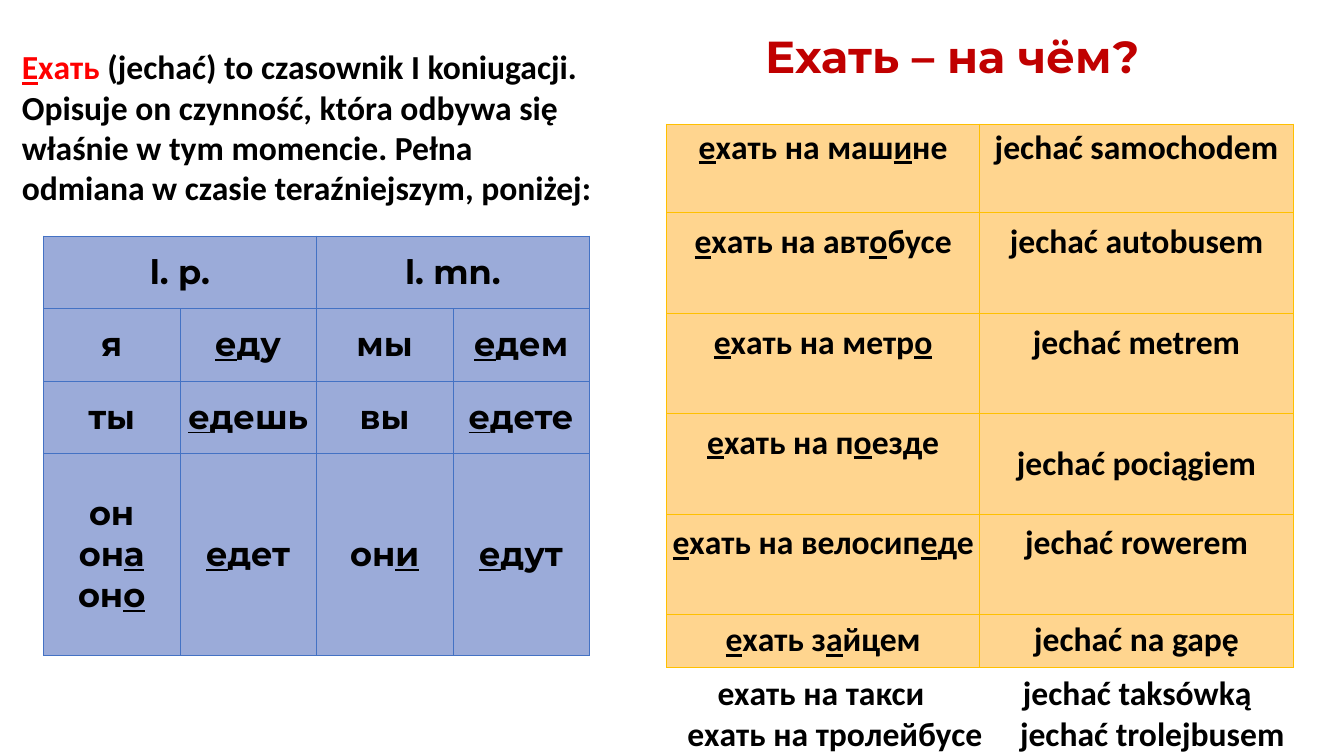
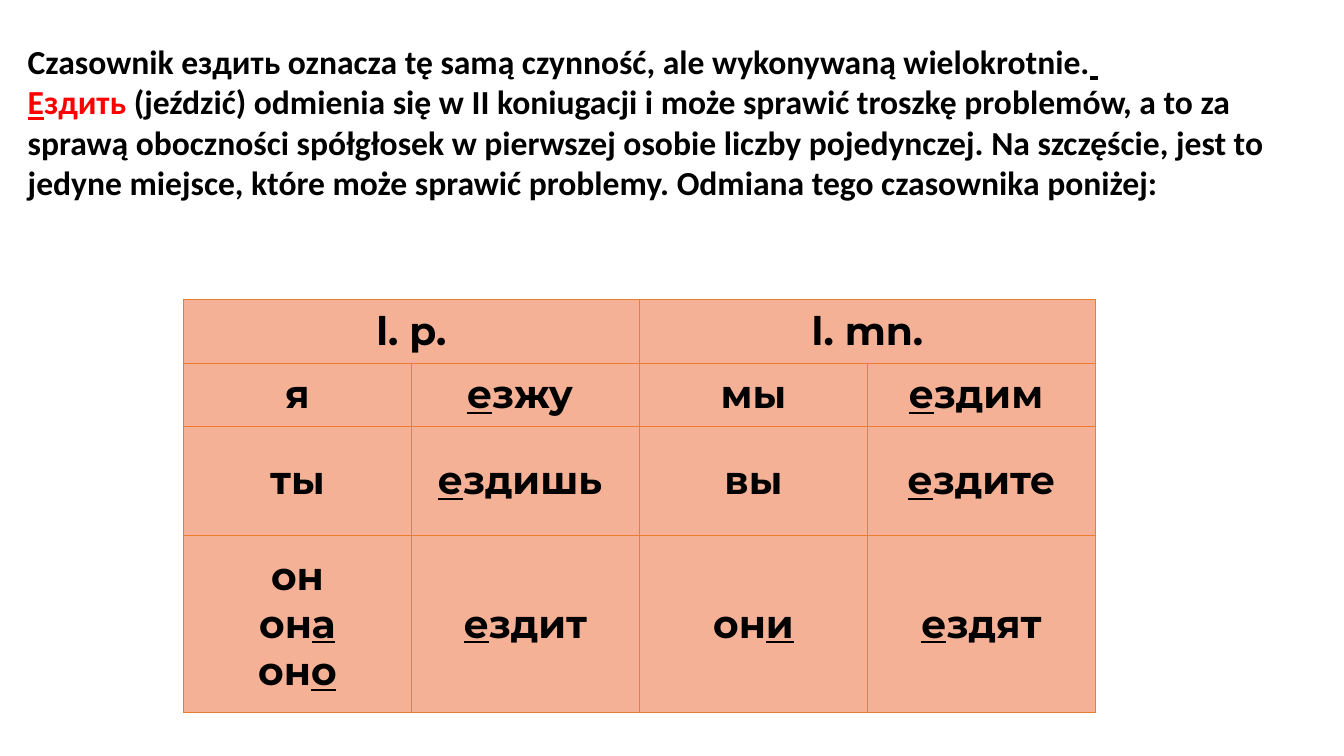
from dataclasses import dataclass

from lxml import etree
from pptx import Presentation
from pptx.dml.color import RGBColor
from pptx.enum.text import MSO_ANCHOR, PP_ALIGN
from pptx.oxml.ns import qn
from pptx.util import Pt

MIDDLE = MSO_ANCHOR.MIDDLE
CENTER = PP_ALIGN.CENTER


@dataclass(frozen=True)
class Theme:
    body_font: str = "Calibri"
    display_font: str = "Montserrat"
    ink: str = "000000"
    red: str = "FF0000"
    title_red: str = "C00000"
    blue: tuple = ("9BABD9", "4472C4")
    yellow: tuple = ("FFD58F", "FFC000")
    orange: tuple = ("F5B196", "ED7D31")
    body_size: int = 24
    large_size: int = 28
    title_size: int = 32
    border: float = 0.5
    cell_margin: float = 1.5
    raised_margin: float = 31


class Lesson:
    def __init__(self, theme):
        self.theme = theme
        self.deck = Presentation()
        self.deck.slide_width = Pt(960)
        self.deck.slide_height = Pt(540)
        self.page = None

    def new_page(self):
        self.page = self.deck.slides.add_slide(self.deck.slide_layouts[6])

    def add_spans(self, para, markup, size, font, color):
        for index, part in enumerate(markup.split("_")):
            if part:
                span = para.add_run()
                span.text = part
                formats = {"name": font, "size": Pt(size), "bold": True,
                           "underline": index % 2 == 1}
                for name, value in formats.items():
                    setattr(span.font, name, value)
                span.font.color.rgb = RGBColor.from_string(color)

    def paragraphs(self, frame, count):
        return [frame.paragraphs[0]] + [frame.add_paragraph() for _ in range(count - 1)]

    def text(self, left, top, width, height, lines, size=None, font=None, indents=()):
        box = self.page.shapes.add_textbox(Pt(left), Pt(top), Pt(width), Pt(height))
        box.text_frame.word_wrap = True
        paras = self.paragraphs(box.text_frame, len(lines))
        for para, spans in zip(paras, lines):
            for markup, color in spans:
                self.add_spans(para, markup, size or self.theme.body_size,
                               font or self.theme.body_font, color)
        for para, indent in zip(paras, indents):
            para._p.get_or_add_pPr().set("marL", str(Pt(indent)))

    def borders(self, cell, color):
        properties = cell._tc.get_or_add_tcPr()
        for index, side in enumerate(("a:lnL", "a:lnR", "a:lnT", "a:lnB")):
            line = etree.Element(qn(side), w=str(Pt(self.theme.border)))
            fill = etree.SubElement(line, qn("a:solidFill"))
            etree.SubElement(fill, qn("a:srgbClr"), val=color)
            properties.insert(index, line)

    def table(self, left, top, column_width, heights, rows, colors, size, font, raised=()):
        columns = len(rows[0])
        fill, border = colors
        table = self.page.shapes.add_table(
            len(rows), columns, Pt(left), Pt(top),
            Pt(column_width * columns), Pt(sum(heights))).table
        table.first_row = table.horz_banding = False
        for column in table.columns:
            column.width = Pt(column_width)
        for row, height in zip(table.rows, heights):
            row.height = Pt(height)
        margin = Pt(self.theme.cell_margin)
        for r, row in enumerate(rows):
            for c, content in enumerate(row):
                cell = table.cell(r, c)
                bottom = Pt(self.theme.raised_margin) if (r, c) in raised else margin
                formats = {"vertical_anchor": MIDDLE, "margin_left": margin,
                           "margin_right": margin, "margin_top": margin,
                           "margin_bottom": bottom}
                for name, value in formats.items():
                    setattr(cell, name, value)
                cell.fill.solid()
                cell.fill.fore_color.rgb = RGBColor.from_string(fill)
                self.borders(cell, border)
                lines = content.split("\n")
                for para, line in zip(self.paragraphs(cell.text_frame, len(lines)), lines):
                    para.alignment = CENTER
                    self.add_spans(para, line, size, font, self.theme.ink)
        return table

    def conjugation(self, left, top, column_width, heights, verbs, colors, size):
        pronouns = [("я", "мы"), ("ты", "вы"), ("он\nон_а_\nон_о_", "он_и_")]
        rows = [("l. p.", "", "l. mn.", "")]
        for (one, many), (single, plural) in zip(pronouns, verbs):
            rows.append((one, single, many, plural))
        table = self.table(left, top, column_width, heights, rows, colors,
                           size, self.theme.display_font)
        for column in (0, 2):
            table.cell(0, column).merge(table.cell(0, column + 1))


def main():
    theme = Theme()
    lesson = Lesson(theme)

    lesson.new_page()
    vehicles = [
        ("_е_хать на маш_и_не", "jechać samochodem"),
        ("_е_хать на авт_о_бусе", "jechać autobusem"),
        ("_е_хать на метр_о_", "jechać metrem"),
        ("_е_хать на п_о_езде", "jechać pociągiem"),
        ("_е_хать на велосип_е_де", "jechać rowerem"),
        ("_е_хать з_а_йцем", "jechać na gapę"),
    ]
    raised = {(r, c) for r in range(5) for c in range(2)} - {(3, 1)}
    lesson.table(476, 88.6, 223.9, [63.4] + [71.7] * 4 + [37.6], vehicles,
                 theme.yellow, theme.body_size, theme.body_font, raised)
    lesson.text(8.5, 29.5, 428, 124, [[
        ("_Е_хать", theme.red),
        (" (jechać) to czasownik I koniugacji. Opisuje on czynność, która odbywa się "
         "właśnie w tym momencie. Pełna odmiana w czasie teraźniejszym, poniżej:",
         theme.ink)]])
    lesson.conjugation(31, 168.5, 97.5, [51.8] * 3 + [144.5],
                       [("_е_ду", "_е_дем"), ("_е_дешь", "_е_дете"), ("_е_дет", "_е_дут")],
                       theme.blue, theme.body_size)
    lesson.text(451.5, 476.6, 260, 65.5,
                [[("ехать на такси", theme.ink)], [("ехать на тролейбусе", theme.ink)]],
                indents=(54, 32.5))
    lesson.text(721.5, 476.6, 214.5, 65.5,
                [[("jechać taksówką", theme.ink)], [("jechać trolejbusem", theme.ink)]],
                indents=(2, 0))
    lesson.text(539.5, 17.3, 312, 46, [[("Ехать – на чём?", theme.title_red)]],
                theme.title_size, theme.display_font)

    lesson.new_page()
    lesson.text(12.7, 25.8, 926, 124, [
        [("Czasownik ездить oznacza tę samą czynność, ale wykonywaną wielokrotnie._ _",
          theme.ink)],
        [("_Е_здить ", theme.red),
         ("(jeździć) оdmienia się w II koniugacji i może sprawić troszkę problemów, "
          "a to za sprawą oboczności spółgłosek w pierwszej osobie liczby pojedynczej. "
          "Na szczęście, jest to jedyne miejsce, które może sprawić problemy. "
          "Odmiana tego czasownika poniżej:", theme.ink)]])
    lesson.conjugation(131, 214, 162.9, [45.3, 45.3, 77.8, 126.7],
                       [("_е_зжу ", "_е_здим "), ("_е_здишь ", "_е_здите"),
                        ("_е_здит", "_е_здят")],
                       theme.orange, theme.large_size)

    lesson.deck.save("out.pptx")


if __name__ == "__main__":
    main()
